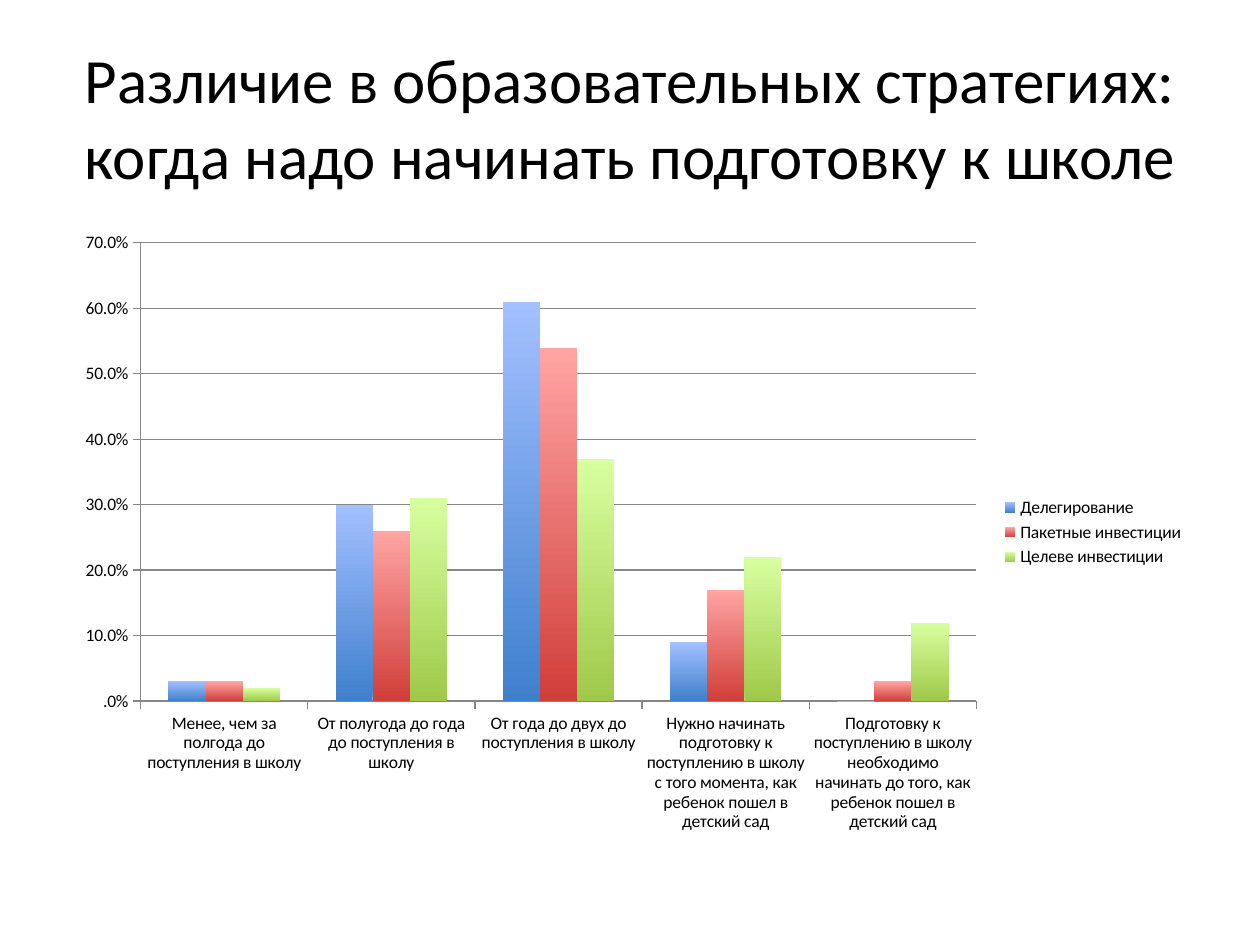
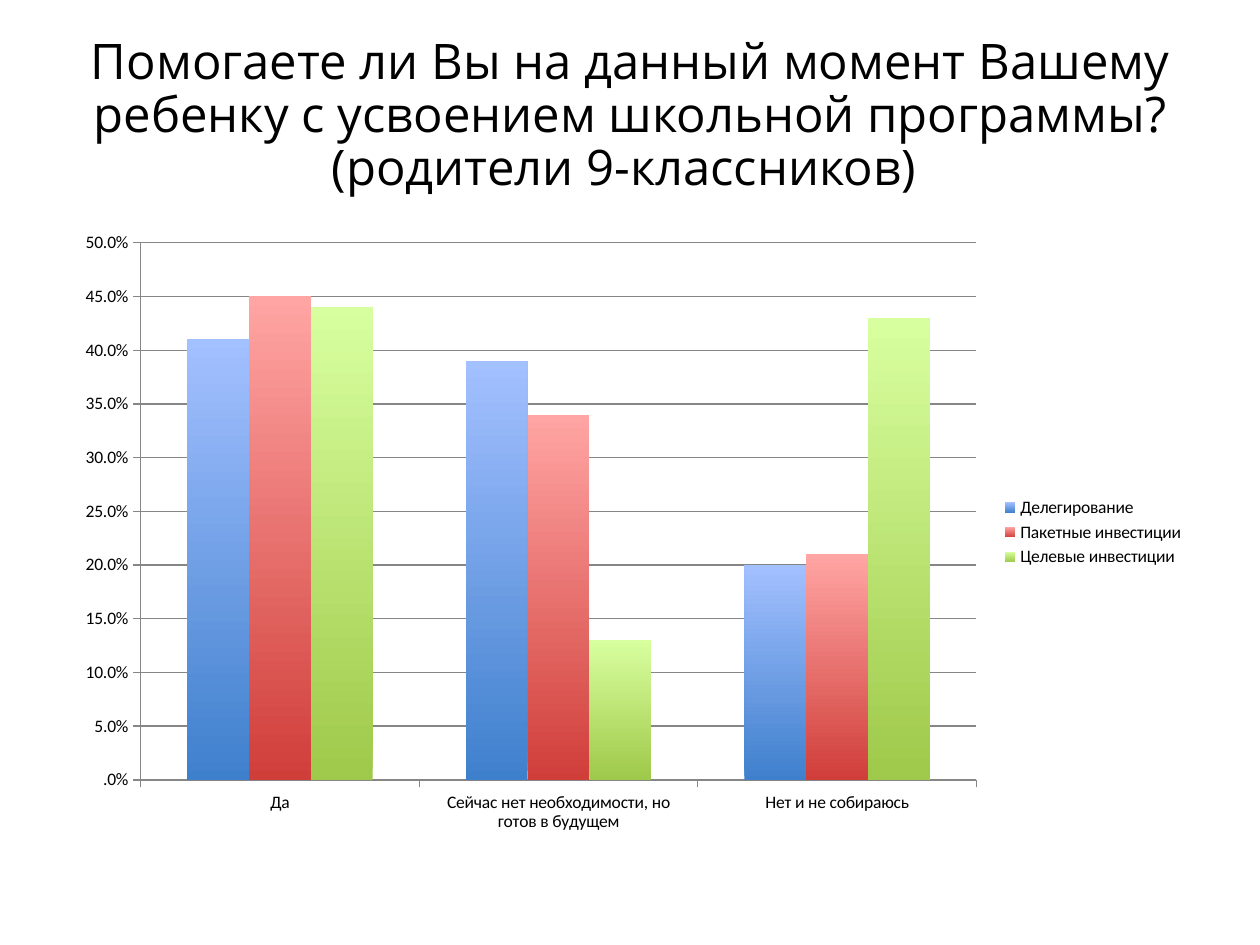
from dataclasses import dataclass

import pptx
import pptx.chart.data
import pptx.dml.color
import pptx.enum.chart
import pptx.enum.text
import pptx.util
from pptx.util import Inches

BLACK = "000000"
AXIS_GRAY = "868686"
CHART_FONT = "Calibri"
PERCENT_FORMAT = "####.0%"
# Bottom and top colour of the columns, one pair per series
COLUMN_GRADIENTS = [("3F80CD", "A3C0FF"), ("D03E3A", "FFA5A3"), ("9FC94A", "D8FF9F")]

LEFT, WIDTH = Inches(0.5), Inches(9)
TITLE_TOP, TITLE_HEIGHT = Inches(0.3), Inches(1.25)
CHART_TOP, CHART_HEIGHT = Inches(1.75), Inches(4.95)


@dataclass
class SurveySlide:
    title: str
    title_font: str
    title_size: int
    line_spacing: float
    categories: list[str]
    series: dict[str, list[float]]
    axis_maximum: float
    axis_step: float


SURVEY_SLIDES = [
    SurveySlide(
        title="Различие в образовательных стратегиях: когда надо начинать подготовку к школе",
        title_font="Calibri",
        title_size=36,
        line_spacing=1.0,
        categories=[
            "Менее, чем за полгода до поступления в школу",
            "От полугода до года до поступления в школу",
            "От года до двух до поступления в школу",
            "Нужно начинать подготовку к поступлению в школу с того момента, "
            "как ребенок пошел в детский сад",
            "Подготовку к поступлению в школу необходимо начинать до того, "
            "как ребенок пошел в детский сад",
        ],
        series={
            "Делегирование": [0.03, 0.3, 0.61, 0.09, 0],
            "Пакетные инвестиции": [0.03, 0.26, 0.54, 0.17, 0.03],
            "Целеве инвестиции": [0.02, 0.31, 0.37, 0.22, 0.12],
        },
        axis_maximum=0.7,
        axis_step=0.1,
    ),
    SurveySlide(
        title="Помогаете ли Вы на данный момент Вашему ребенку с усвоением "
        "школьной программы?\v(родители 9-классников) ",
        title_font="Open Sans",
        title_size=28,
        line_spacing=0.9,
        categories=["Да", "Сейчас нет необходимости, но готов в будущем", "Нет и не собираюсь"],
        series={
            "Делегирование": [0.41, 0.39, 0.2],
            "Пакетные инвестиции": [0.45, 0.34, 0.21],
            "Целевые инвестиции": [0.44, 0.13, 0.43],
        },
        axis_maximum=0.5,
        axis_step=0.05,
    ),
]


def color(hex_value: str) -> pptx.dml.color.RGBColor:
    return pptx.dml.color.RGBColor.from_string(hex_value)


def style_font(font, name: str, size: int) -> None:
    font.name = name
    font.size = pptx.util.Pt(size)
    font.color.rgb = color(BLACK)


def style_line(line) -> None:
    line.color.rgb = color(AXIS_GRAY)
    line.width = pptx.util.Pt(0.75)


def add_title(slide, survey: SurveySlide) -> None:
    text_box = slide.shapes.add_textbox(LEFT, TITLE_TOP, WIDTH, TITLE_HEIGHT)
    text_frame = text_box.text_frame
    text_frame.word_wrap = True
    text_frame.vertical_anchor = pptx.enum.text.MSO_ANCHOR.MIDDLE
    paragraph = text_frame.paragraphs[0]
    paragraph.text = survey.title
    paragraph.alignment = pptx.enum.text.PP_ALIGN.CENTER
    paragraph.line_spacing = survey.line_spacing
    for run in paragraph.runs:
        style_font(run.font, survey.title_font, survey.title_size)


def add_column_chart(slide, survey: SurveySlide) -> None:
    chart_data = pptx.chart.data.CategoryChartData(number_format=PERCENT_FORMAT)
    chart_data.categories = survey.categories
    for name, values in survey.series.items():
        chart_data.add_series(name, values)
    chart = slide.shapes.add_chart(
        pptx.enum.chart.XL_CHART_TYPE.COLUMN_CLUSTERED,
        LEFT, CHART_TOP, WIDTH, CHART_HEIGHT, chart_data,
    ).chart
    chart.has_title = False
    style_font(chart.font, CHART_FONT, 10)

    # Legend
    chart.has_legend = True
    chart.legend.position = pptx.enum.chart.XL_LEGEND_POSITION.RIGHT
    chart.legend.include_in_layout = False

    # Axes and grid
    value_axis = chart.value_axis
    value_axis.minimum_scale = 0
    value_axis.maximum_scale = survey.axis_maximum
    value_axis.major_unit = survey.axis_step
    value_axis.tick_labels.number_format = PERCENT_FORMAT
    value_axis.tick_labels.number_format_is_linked = False
    value_axis.has_major_gridlines = True
    style_line(value_axis.major_gridlines.format.line)
    for axis in (chart.category_axis, value_axis):
        axis.major_tick_mark = pptx.enum.chart.XL_TICK_MARK.OUTSIDE
        style_line(axis.format.line)

    # Columns
    plot = chart.plots[0]
    plot.gap_width = 150
    plot.overlap = 0
    plot.vary_by_categories = False
    for series, gradient in zip(plot.series, COLUMN_GRADIENTS):
        series.invert_if_negative = False
        fill = series.format.fill
        fill.gradient()
        fill.gradient_angle = 90
        for stop, hex_value in zip(fill.gradient_stops, gradient):
            stop.color.rgb = color(hex_value)


def main() -> None:
    presentation = pptx.Presentation()
    presentation.slide_width = Inches(10)
    presentation.slide_height = Inches(7.5)
    blank_layout = presentation.slide_layouts[6]
    for survey in SURVEY_SLIDES:
        slide = presentation.slides.add_slide(blank_layout)
        add_title(slide, survey)
        add_column_chart(slide, survey)
    presentation.save("out.pptx")


if __name__ == "__main__":
    main()
